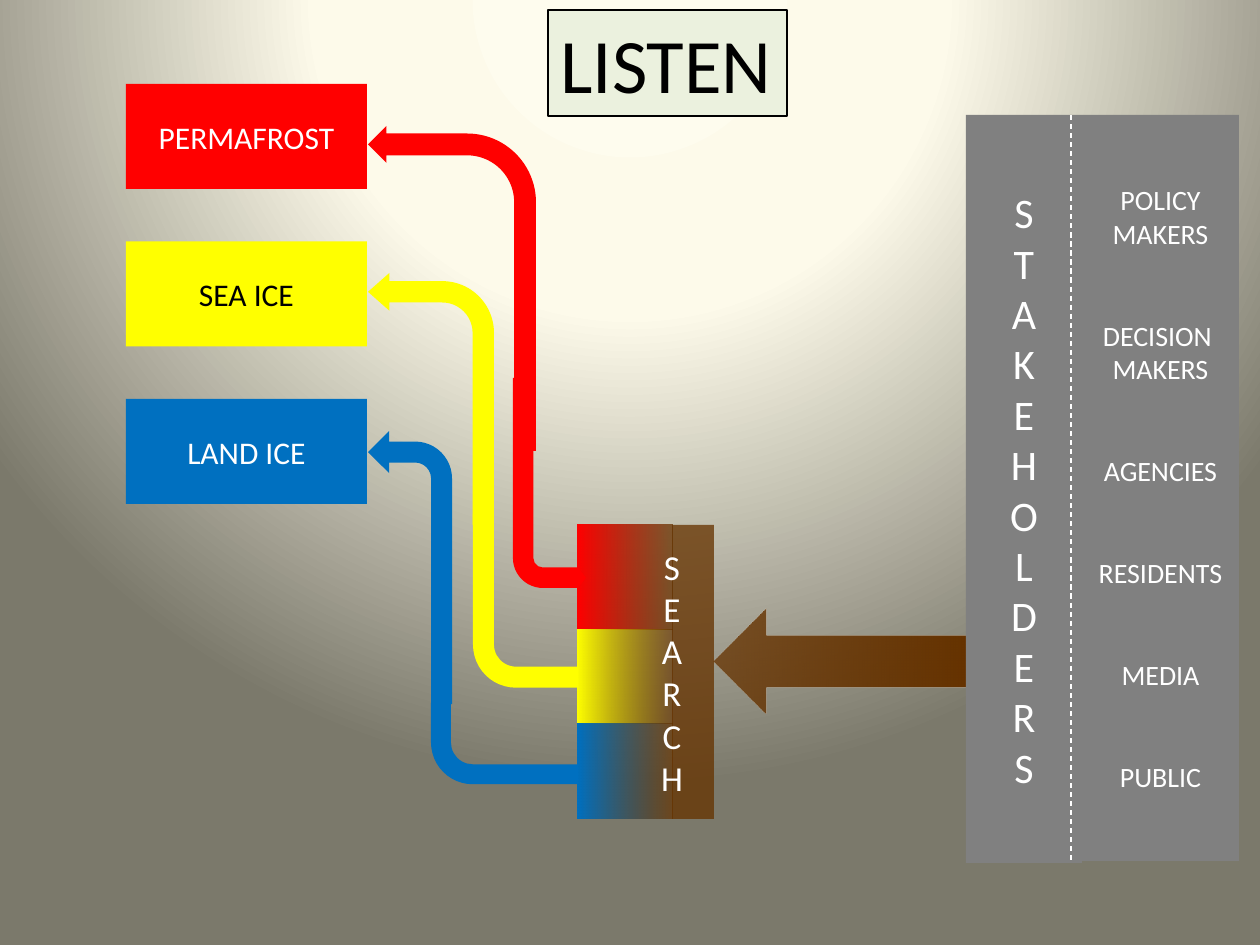
from pptx import Presentation
from pptx.dml.color import RGBColor
from pptx.enum.dml import MSO_LINE
from pptx.enum.shapes import MSO_CONNECTOR, MSO_SHAPE
from pptx.enum.text import MSO_ANCHOR, MSO_AUTO_SIZE, PP_ALIGN
from pptx.oxml import parse_xml
from pptx.oxml.ns import nsdecls, qn
from pptx.util import Emu, Pt
from lxml.etree import SubElement

RED, YELLOW, BLUE = "FF0000", "FFFF00", "0070C0"
BROWN, GRAY, WHITE, BLACK = "663300", "808080", "FFFFFF", "000000"


def px(n):
    return Emu(round(n * 914400 / 126))


def rgb(value):
    return RGBColor.from_string(value)


def set_gradient(fill, parent, stops, direction):
    """Stops are (position %, colour, opacity %)."""
    fill.gradient()
    gs = "".join(
        f'<a:gs pos="{pos * 1000}"><a:srgbClr val="{color}">'
        f'<a:alpha val="{opacity * 1000}"/></a:srgbClr></a:gs>'
        for pos, color, opacity in stops)
    new = parse_xml(f'<a:gradFill {nsdecls("a")} rotWithShape="1">'
                    f'<a:gsLst>{gs}</a:gsLst>{direction}</a:gradFill>')
    old = parent.find(qn("a:gradFill"))
    parent.replace(old, new)


def set_background(slide):
    fill = slide.background.fill
    fill.solid()
    bg_pr = slide._element.find(".//" + qn("p:bgPr"))
    stops = [(0, "FEFCEE", 100), (40, "FDFAEA", 100), (100, "7B796B", 100)]
    set_gradient(fill, bg_pr, stops,
                 '<a:path path="circle"><a:fillToRect l="50000" t="-80000" '
                 'r="50000" b="180000"/></a:path>')


def add_block(slide, box, color, kind=MSO_SHAPE.RECTANGLE, opacity=100,
              fade_to=None):
    """Filled shape; fade_to is the opacity of the brown at the far end."""
    s = slide.shapes.add_shape(kind, *map(px, box))
    s.shadow.inherit = False
    s.line.fill.background()
    if fade_to:
        set_gradient(s.fill, s._element.spPr,
                     [(0, color, 100), (100, BROWN, fade_to)],
                     '<a:lin ang="0" scaled="1"/>')
        return s
    s.fill.solid()
    s.fill.fore_color.rgb = rgb(color)
    if opacity < 100:
        clr = s._element.spPr.find(qn("a:solidFill"))[0]
        SubElement(clr, qn("a:alpha")).set("val", str(opacity * 1000))
    return s


def add_bent_arrow(slide, box, color, adjustments, rotation=0):
    s = add_block(slide, box, color, MSO_SHAPE.BENT_ARROW)
    s._element.spPr.find(qn("a:xfrm")).set("flipV", "1")
    s.rotation = rotation
    for i, value in enumerate(adjustments):
        s.adjustments[i] = value


def write(s, groups, size, color=WHITE, align=PP_ALIGN.CENTER,
          anchor=MSO_ANCHOR.MIDDLE, wrap=True, gap=0):
    """One paragraph per item; gap is the space before each later group."""
    tf = s.text_frame
    tf.word_wrap = wrap
    tf.vertical_anchor = anchor
    for g, group in enumerate(groups):
        for i, text in enumerate(group):
            p = tf.paragraphs[0] if g == i == 0 else tf.add_paragraph()
            p.alignment = align
            if g and i == 0:
                p.space_before = Pt(gap)
            r = p.add_run()
            r.text = text
            r.font.name = "Calibri"
            r.font.size = Pt(size)
            r.font.color.rgb = rgb(color)


def add_divider(slide, x, top, bottom):
    c = slide.shapes.add_connector(MSO_CONNECTOR.STRAIGHT,
                                   px(x), px(top), px(x), px(bottom))
    c.line.color.rgb = rgb(WHITE)
    c.line.width = Pt(0.75)
    c.line.dash_style = MSO_LINE.DASH
    SubElement(c._element.spPr, qn("a:effectLst"))


def add_title(slide):
    s = add_block(slide, (548, 10, 239, 106), "EBF1DE")
    s.line.color.rgb = rgb(BLACK)
    s.line.width = Pt(0.75)
    write(s, [["LISTEN"]], 44, BLACK, PP_ALIGN.LEFT, MSO_ANCHOR.TOP, False)
    s.text_frame.auto_size = MSO_AUTO_SIZE.SHAPE_TO_FIT_TEXT


def main():
    prs = Presentation()
    prs.slide_width, prs.slide_height = px(1260), px(945)
    slide = prs.slides.add_slide(prs.slide_layouts[6])
    set_background(slide)

    # Topics
    topics = [("PERMAFROST", RED, WHITE), ("SEA ICE", YELLOW, BLACK),
              ("LAND ICE", BLUE, WHITE)]
    for i, (name, fill, color) in enumerate(topics):
        s = add_block(slide, (126, 84 + 157.5 * i, 241, 105), fill)
        write(s, [[name]], 18, color)

    # Stakeholder list and the arrow towards search
    s = add_block(slide, (1082, 115, 157, 746), GRAY)
    write(s, [["POLICY", "MAKERS"], ["DECISION ", "MAKERS"], ["AGENCIES"],
              ["RESIDENTS"], ["MEDIA"], ["PUBLIC"]], 16, gap=39)
    s = add_block(slide, (714, 609, 252, 105), BROWN, MSO_SHAPE.RIGHT_ARROW,
                  fade_to=75)
    s.rotation = 180

    # Upper halves of the paths, pointing at the topics
    for box, color, adj in [
            ((368, 431, 84, 273), BLUE, (0.25, 0.25, 0.25, 0.44)),
            ((368, 273, 126, 252), YELLOW, (0.17, 0.15, 0.17, 0.41)),
            ((368, 126, 168, 325), RED, (0.13, 0.11, 0.11, 0.41))]:
        add_bent_arrow(slide, box, color, adj, rotation=180)

    # Search block
    add_block(slide, (672, 525, 42, 294), BROWN, opacity=77)
    for top, height, color, fade in [(525, 105, RED, 75),
                                     (630, 94, YELLOW, 66),
                                     (724, 95, BLUE, 71)]:
        add_block(slide, (577, top, 95, height), color, fade_to=fade)

    # Stakeholder heading
    s = add_block(slide, (966, 115, 116, 748), GRAY)
    write(s, [list("STAKEHOLDERS")], 24)
    add_divider(slide, 1071, 115, 861)

    s = slide.shapes.add_textbox(px(630), px(546), px(84), px(252))
    write(s, [list("SEARCH")], 20)

    add_title(slide)

    # Lower halves of the paths, joining the search block
    for box, color, adj in [
            ((431, 703, 147, 95), BLUE, (0.21, 0.25, 0, 0.44)),
            ((473, 514, 105, 179), YELLOW, (0.2, 0.15, 0, 0.41)),
            ((513, 378, 73, 210), RED, (0.29, 0.14, 0.11, 0.41))]:
        add_bent_arrow(slide, box, color, adj)

    prs.save("out.pptx")


if __name__ == "__main__":
    main()
